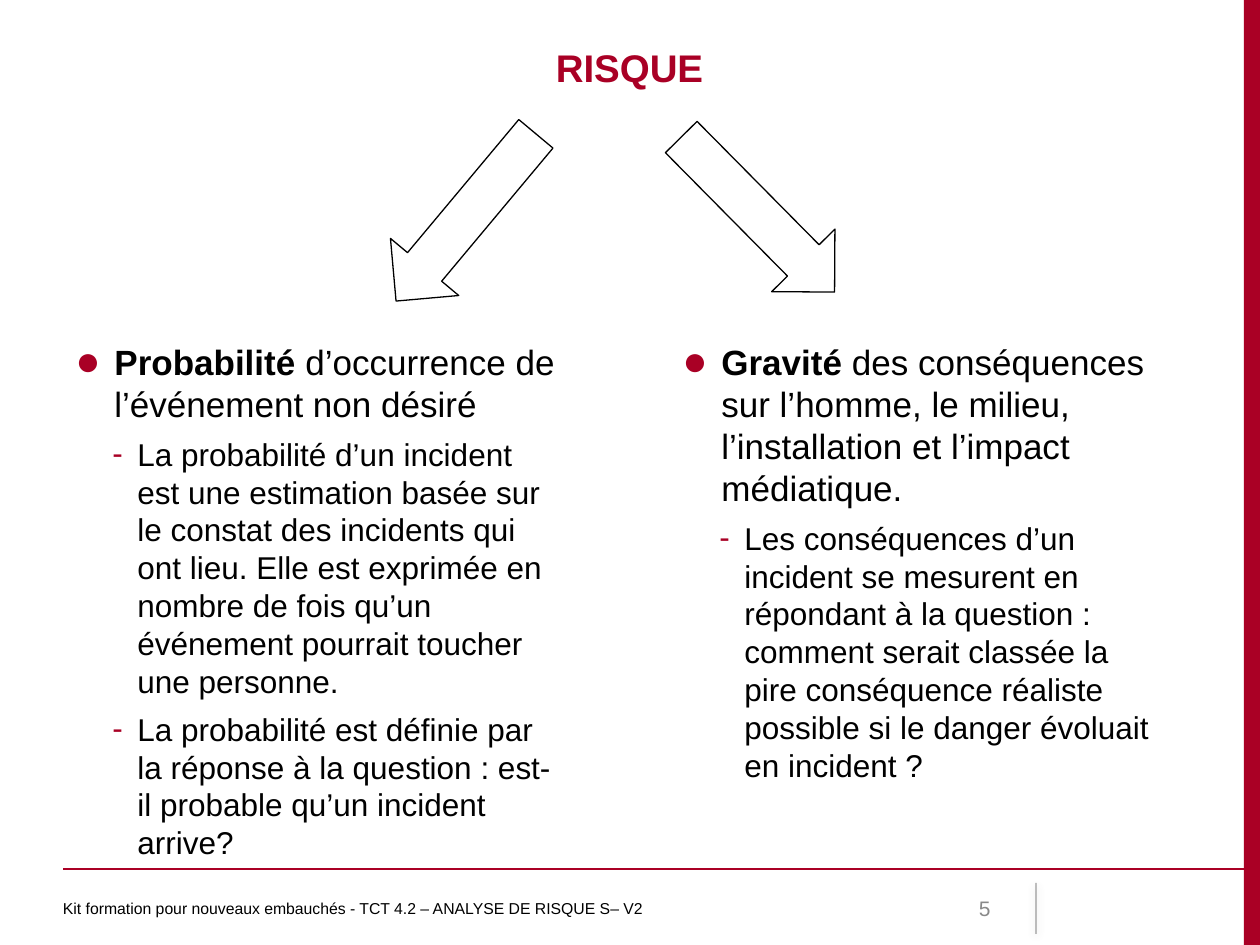
from lxml.etree import SubElement
from pptx import Presentation
from pptx.dml.color import RGBColor
from pptx.enum.shapes import MSO_CONNECTOR as Connector, MSO_SHAPE as Shape
from pptx.enum.text import MSO_ANCHOR as Anchor, MSO_AUTO_SIZE as AutoSize, PP_ALIGN as Align
from pptx.oxml import parse_xml
from pptx.oxml.ns import nsdecls, qn
from pptx.util import Pt

EMU_PER_PX = 914400 / 126
WIDTH, HEIGHT = 1260, 945
COLORS = {"band": "AA0025", "accent": "A90025", "text": "000000", "number": "898989"}
FONT = "Arial"
# Per level: text size, left margin px, hanging px, bullet, bullet percent
LEVELS = [(20, 39, 39, "●", 120), (18, 62, 25, "-", 100)]


def px(value):
    return round(value * EMU_PER_PX)


def color(name):
    return RGBColor.from_string(COLORS[name])


class SlideBuilder:
    def __init__(self, deck):
        self.page = deck.slides.add_slide(deck.slide_layouts[5])

    def span(self, para, text, size, ink="text", bold=False):
        run = para.add_run()
        run.text = text
        run.font.name, run.font.size, run.font.bold = FONT, Pt(size), bold
        run.font.color.rgb = color(ink)

    def frame(self, box, anchor=Anchor.TOP):
        frame = box.text_frame
        frame.word_wrap = True
        frame.auto_size = AutoSize.NONE
        frame.vertical_anchor = anchor
        return frame

    def title(self, text, left, top, width, height):
        box = self.page.shapes.title
        box.left, box.top, box.width, box.height = map(px, (left, top, width, height))
        para = self.frame(box).paragraphs[0]
        para.alignment = Align.CENTER
        self.span(para, text, 22, "accent", True)

    def label(self, text, left, top, width, height, size, ink="text",
              align=Align.LEFT, inset=13):
        box = self.page.shapes.add_textbox(*map(px, (left, top, width, height)))
        frame = self.frame(box, Anchor.MIDDLE)
        frame.margin_left = px(inset)
        para = frame.paragraphs[0]
        para.alignment = align
        self.span(para, text, size, ink)

    def bullets(self, items, left, top, width, height):
        """Each item is a level and a list of (text, bold) parts."""
        box = self.page.shapes.add_textbox(*map(px, (left, top, width, height)))
        frame = self.frame(box)
        for index, (level, parts) in enumerate(items):
            para = frame.add_paragraph() if index else frame.paragraphs[0]
            size, margin, hanging, mark, percent = LEVELS[level]
            props = para._p.get_or_add_pPr()
            props.set("marL", str(px(margin)))
            props.set("indent", str(-px(hanging)))
            tint = SubElement(props, qn("a:buClr"))
            SubElement(tint, qn("a:srgbClr"), val=COLORS["accent"])
            SubElement(props, qn("a:buSzPct"), val=str(percent * 1000))
            SubElement(props, qn("a:buFont"), typeface=FONT)
            SubElement(props, qn("a:buChar"), char=mark)
            para.level = level
            para.space_before = Pt(3 if index else 0)
            para.space_after = Pt(3)
            for text, bold in parts:
                self.span(para, text, size, bold=bold)

    def band(self, left, top, width, height):
        shape = self.page.shapes.add_shape(Shape.RECTANGLE, *map(px, (left, top, width, height)))
        shape.shadow.inherit = False
        shape.fill.solid()
        shape.fill.fore_color.rgb = color("band")
        shape.line.fill.background()

    def arrow(self, left, top, width, height, rotation):
        shape = self.page.shapes.add_shape(Shape.LEFT_ARROW, *map(px, (left, top, width, height)))
        shape.shadow.inherit = False
        shape.rotation = rotation
        shape.fill.background()
        shape.line.color.rgb = color("text")
        shape.line.width = Pt(0.75)

    def rule(self, x1, y1, x2, y2, ink, weight, soft=False):
        line = self.page.shapes.add_connector(Connector.STRAIGHT, *map(px, (x1, y1, x2, y2)))
        line.line.color.rgb = color(ink)
        line.line.width = Pt(weight)
        effects = parse_xml(f"<a:effectLst {nsdecls('a')}/>")
        line._element.spPr.append(effects)
        if soft:
            tint = line._element.spPr.find(".//" + qn("a:srgbClr"))
            SubElement(tint, qn("a:alpha"), val="70000")
            shadow = SubElement(effects, qn("a:outerShdw"), blurRad=str(Pt(5)),
                                dist=str(Pt(1.6)), dir="5400000", rotWithShape="0")
            shade = SubElement(shadow, qn("a:srgbClr"), val=COLORS[ink])
            SubElement(shade, qn("a:alpha"), val="38000")


def main():
    deck = Presentation()
    deck.slide_width, deck.slide_height = px(WIDTH), px(HEIGHT)
    slide = SlideBuilder(deck)

    # Page frame
    slide.band(1244, 0, 16, HEIGHT)
    slide.rule(63, 869, WIDTH, 869, "band", 0.75)
    slide.rule(1036, 883, 1036, 934, "text", 0.5, soft=True)

    # Title and the two arrows leaving it
    slide.title("RISQUE", 63, 38, 1133, 87)
    slide.arrow(357, 173, 218, 89, 309.9)
    slide.arrow(649, 170, 218, 89, 225.3)

    # Two columns
    probability = [
        (0, [("Probabilité ", True), ("d’occurrence de l’événement non désiré", False)]),
        (1, [("La probabilité d’un incident est une estimation basée sur le constat des "
              "incidents qui ont lieu. Elle est exprimée en nombre de fois qu’un événement "
              "pourrait toucher une personne.", False)]),
        (1, [("La probabilité est définie par la réponse à la question : est-il probable "
              "qu’un incident arrive?", False)]),
    ]
    severity = [
        (0, [("Gravité ", True), ("des conséquences sur l’homme, le milieu, l’installation "
                                  "et l’impact médiatique.", False)]),
        (1, [("Les conséquences d’un incident se mesurent en répondant à la question : "
              "comment serait classée la pire conséquence réaliste possible si le danger "
              "évoluait en incident ?", False)]),
    ]
    for left, items in ((63, probability), (670, severity)):
        slide.bullets(items, left, 334, 508, 496)

    # Footer
    slide.label("Kit formation pour nouveaux embauchés - TCT 4.2 – ANALYSE DE RISQUE S– V2",
                63, 883, 766, 51, 9, inset=0)
    slide.label("5", 903, 883, 100, 51, 12, "number", Align.RIGHT)

    deck.save("out.pptx")


if __name__ == "__main__":
    main()
